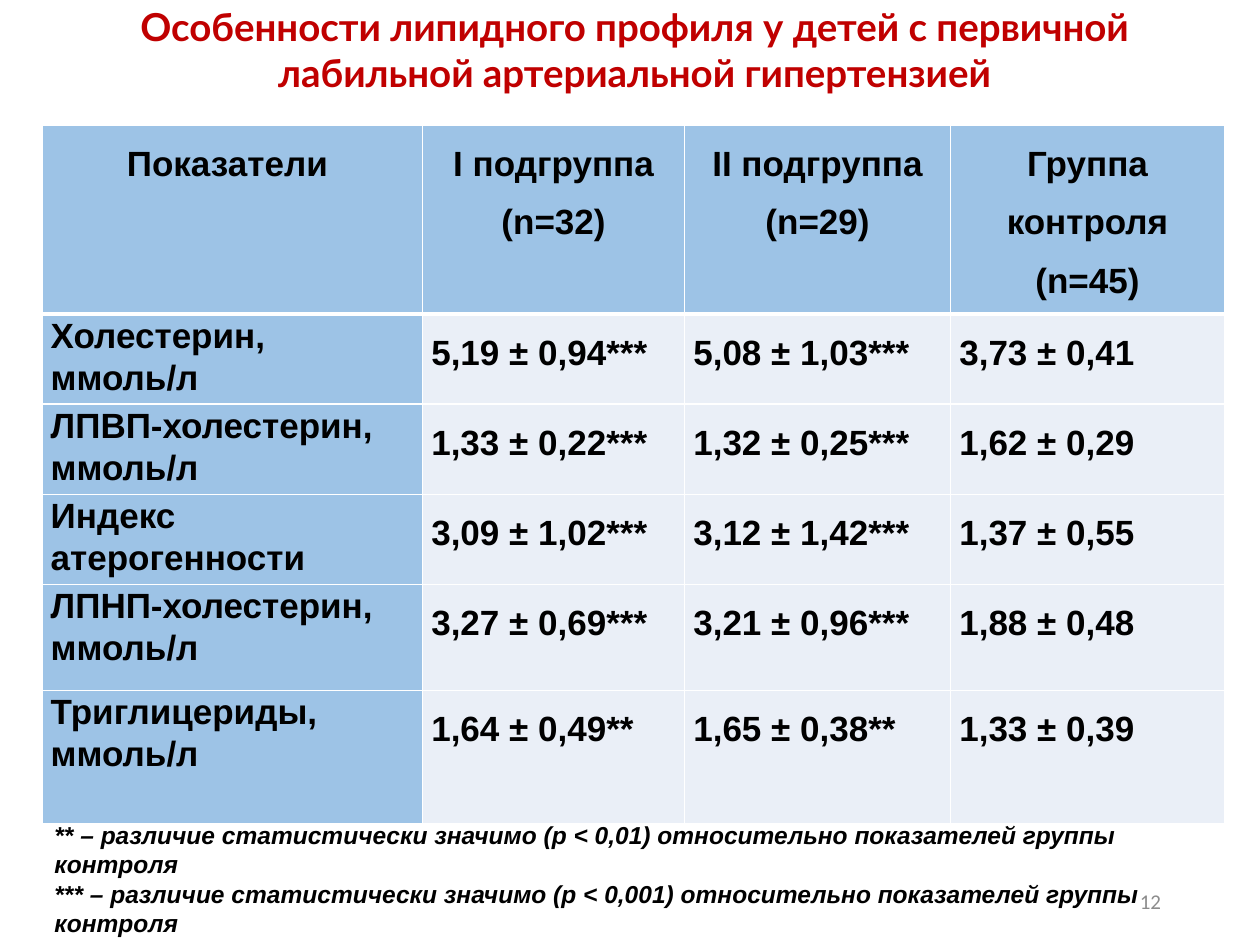
from pptx import Presentation
from pptx import util as u
from pptx.dml.color import RGBColor
from pptx.enum import text as t
from pptx.oxml import parse_xml
from pptx.oxml.ns import nsdecls

Pt = u.Pt
HEADER_FILL, BODY_FILL, BORDER = "9DC3E6", "EAEFF7", "FFFFFF"
COLUMN_WIDTHS = [217.5, 149.75, 152, 156.5]
ROW_HEIGHTS = [106.5, 51.5, 51.5, 51.5, 60.5, 76.3]
ROWS = [
    ["Показатели ", "I подгруппа (n=32)", "II подгруппа (n=29)", "Группа контроля (n=45)"],
    ["Холестерин, ммоль/л", "5,19 ± 0,94***", "5,08 ± 1,03***", "3,73 ± 0,41"],
    ["ЛПВП-холестерин, ммоль/л", "1,33 ± 0,22***", "1,32 ± 0,25***", "1,62 ± 0,29"],
    ["Индекс атерогенности", "3,09 ± 1,02***", "3,12 ± 1,42***", "1,37 ± 0,55"],
    ["ЛПНП-холестерин, ммоль/л", "3,27 ± 0,69***", "3,21 ± 0,96***", "1,88 ± 0,48"],
    ["Триглицериды, ммоль/л", "1,64 ± 0,49**", "1,65 ± 0,38**", "1,33 ± 0,39"],
]
FOOTNOTES = [
    "** – различие статистически значимо (р < 0,01) относительно показателей группы контроля",
    "*** – различие статистически значимо (р < 0,001) относительно показателей группы контроля",
]


def color(value):
    return RGBColor.from_string(value)


def write(frame, *lines, size, font="Arial", ink="000000", bold=True, italic=False,
          align=t.PP_ALIGN.LEFT, spacing=1.0):
    frame.word_wrap = True
    for index, line in enumerate(lines):
        paragraph = frame.paragraphs[0] if index == 0 else frame.add_paragraph()
        paragraph.alignment = align
        paragraph.line_spacing = spacing
        paragraph.space_before = Pt(0)
        run = paragraph.add_run()
        run.text = line
        run.font.size, run.font.name = Pt(size), font
        run.font.bold, run.font.italic = bold, italic
        run.font.color.rgb = color(ink)


def place(shape, left, top, width, height):
    shape.left, shape.top = Pt(left), Pt(top)
    shape.width, shape.height = Pt(width), Pt(height)


def add_title(slide, *box):
    title = slide.shapes.title
    place(title, *box)
    frame = title.text_frame
    write(frame, "Особенности липидного профиля у детей с первичной лабильной "
          "артериальной гипертензией", size=22, font="Lato", ink="C00000",
          align=t.PP_ALIGN.CENTER)
    frame.vertical_anchor = t.MSO_ANCHOR.MIDDLE
    frame.auto_size = t.MSO_AUTO_SIZE.SHAPE_TO_FIT_TEXT


def set_borders(cell, top=1, bottom=1):
    properties = cell._tc.get_or_add_tcPr()
    for side, width in (("L", 1), ("R", 1), ("T", top), ("B", bottom)):
        properties.append(parse_xml(
            f'<a:ln{side} {nsdecls("a")} w="{Pt(width)}"><a:solidFill>'
            f'<a:srgbClr val="{BORDER}"/></a:solidFill></a:ln{side}>'))


def add_lipid_table(slide, left, top):
    table = slide.shapes.add_table(
        len(ROWS), len(COLUMN_WIDTHS), Pt(left), Pt(top),
        Pt(sum(COLUMN_WIDTHS)), Pt(sum(ROW_HEIGHTS))).table
    for column, width in zip(table.columns, COLUMN_WIDTHS):
        column.width = Pt(width)
    for r, (height, values) in enumerate(zip(ROW_HEIGHTS, ROWS)):
        table.rows[r].height = Pt(height)
        for c, value in enumerate(values):
            cell = table.cell(r, c)
            set_borders(cell, top=3 if r == 1 else 1, bottom=3 if r == 0 else 1)
            cell.fill.solid()
            cell.fill.fore_color.rgb = color(HEADER_FILL if r == 0 or c == 0 else BODY_FILL)
            cell.margin_left = cell.margin_right = Pt(5)
            cell.margin_top = cell.margin_bottom = Pt(0)
            if r == 0:
                align, spacing = t.PP_ALIGN.CENTER, 1.5
            elif c == 0:
                align, spacing = t.PP_ALIGN.LEFT, 1.07
            else:
                align, spacing = t.PP_ALIGN.JUSTIFY, 1.5
            write(cell.text_frame, value, size=20, align=align, spacing=spacing)


def add_footnotes(slide, *box):
    shape = slide.shapes.add_textbox(*map(Pt, box))
    write(shape.text_frame, *FOOTNOTES, size=14, italic=True)
    shape.text_frame.auto_size = t.MSO_AUTO_SIZE.SHAPE_TO_FIT_TEXT


def add_page_number(slide, *box):
    frame = slide.shapes.add_textbox(*map(Pt, box)).text_frame
    write(frame, "12", size=12, font="Calibri", ink="8C8C8C", bold=False,
          align=t.PP_ALIGN.RIGHT)
    frame.vertical_anchor = t.MSO_ANCHOR.MIDDLE


def main():
    presentation = Presentation()
    presentation.slide_width, presentation.slide_height = Pt(720), Pt(540)
    slide = presentation.slides.add_slide(presentation.slide_layouts[5])
    add_title(slide, 16, -2, 693.5, 60.5)
    add_lipid_table(slide, 24, 71.5)
    add_footnotes(slide, 24, 465, 693.5, 78)
    add_page_number(slide, 508.5, 500.5, 162, 28.75)
    presentation.save("out.pptx")


if __name__ == "__main__":
    main()
